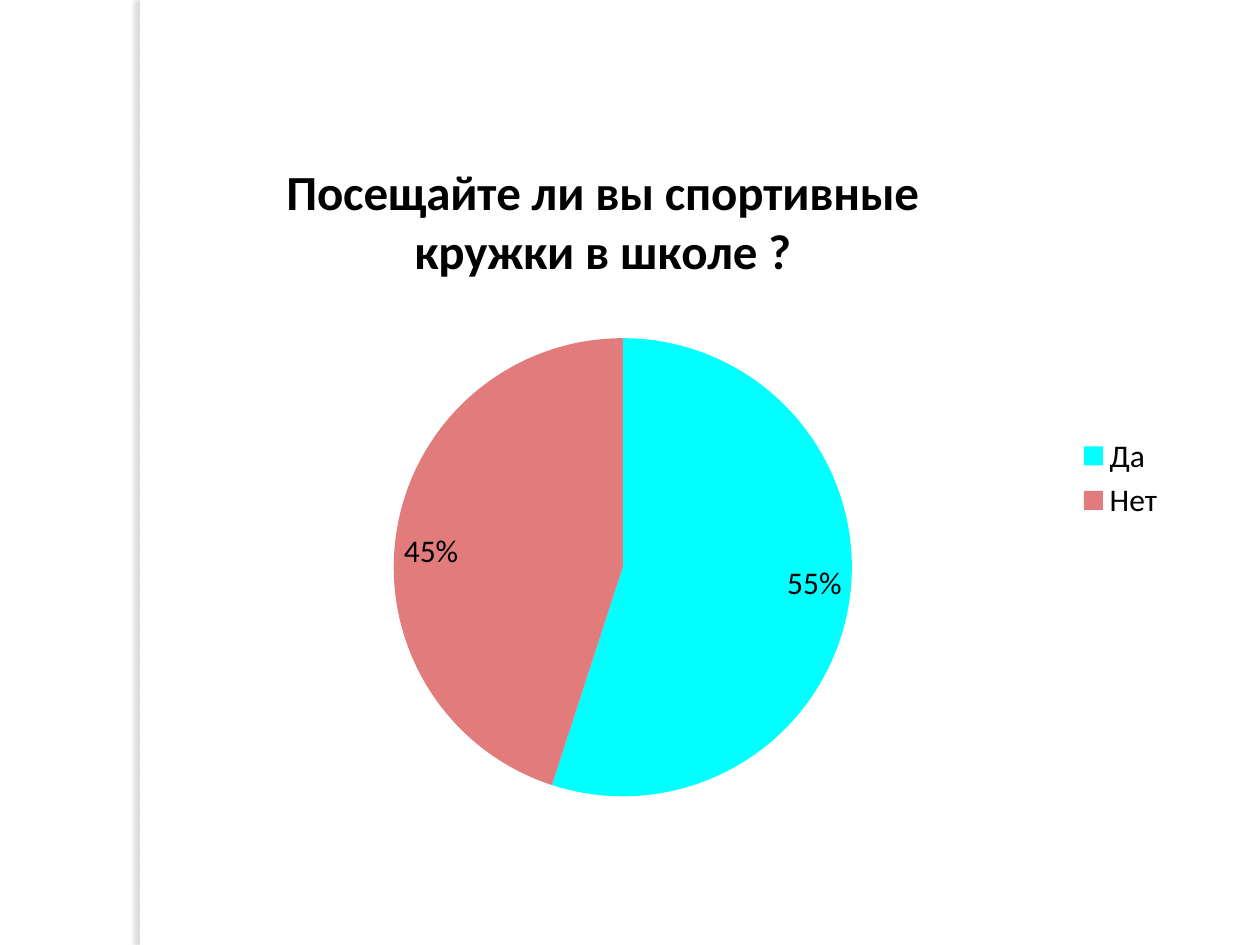
from pptx import Presentation
from pptx.chart.data import CategoryChartData
from pptx.dml.color import RGBColor
from pptx.enum.chart import XL_CHART_TYPE, XL_LABEL_POSITION, XL_LEGEND_POSITION
from pptx.enum.shapes import MSO_SHAPE
from pptx.oxml import parse_xml
from pptx.oxml.ns import nsdecls, qn
from pptx.util import Inches, Pt

WHITE = RGBColor(0xFF, 0xFF, 0xFF)
BLACK = RGBColor(0x00, 0x00, 0x00)
CYAN = RGBColor(0x00, 0xFF, 0xFF)
ROSE = RGBColor(0xE1, 0x7B, 0x7C)
SHADE = RGBColor(0x73, 0x6F, 0x63)


def place(parent, index, target=None, **shares):
    """Set a manual layout, in shares of the chart's size."""
    old = parent.find(qn("c:layout"))
    if old is not None:
        parent.remove(old)
    tags = f'<c:layoutTarget val="{target}"/>' if target else ""
    tags += "".join(f'<c:{key}Mode val="edge"/>' for key in "xy")
    tags += "".join(f'<c:{key} val="{val}"/>' for key, val in shares.items())
    parent.insert(index, parse_xml(
        f'<c:layout {nsdecls("c")}><c:manualLayout>{tags}'
        '</c:manualLayout></c:layout>'))


class Deck:
    face = "Calibri"
    size = Pt(18)
    head = Pt(28)

    def __init__(self, wide, high):
        self.prs = Presentation()
        self.prs.slide_width = Inches(wide)
        self.prs.slide_height = Inches(high)
        self.slide = self.prs.slides.add_slide(self.prs.slide_layouts[6])

    def box(self, x, y, w, h):
        """Turn shares of the slide into lengths."""
        wide, high = self.prs.slide_width, self.prs.slide_height
        return int(x * wide), int(y * high), int(w * wide), int(h * high)

    def style(self, font, size, bold=False):
        font.name, font.size, font.bold = self.face, size, bold
        font.color.rgb = BLACK

    def strip(self, *area):
        bar = self.slide.shapes.add_shape(MSO_SHAPE.RECTANGLE, *self.box(*area))
        bar.fill.solid()
        bar.fill.fore_color.rgb = WHITE
        bar.line.fill.background()
        bar.shadow.inherit = False
        effects = bar.element.spPr.find(qn("a:effectLst"))
        effects.append(parse_xml(
            f'<a:outerShdw {nsdecls("a")} blurRad="{Pt(3)}" dist="{Pt(3)}" '
            f'dir="10800000" algn="r" rotWithShape="0"><a:srgbClr val="{SHADE}">'
            '<a:alpha val="25000"/></a:srgbClr></a:outerShdw>'))

    def pie(self, title, parts, *area):
        data = CategoryChartData(number_format="0%")
        data.categories = [name for name, _, _ in parts]
        data.add_series(title, [value for _, value, _ in parts])
        chart = self.slide.shapes.add_chart(
            XL_CHART_TYPE.PIE, *self.box(*area), data).chart
        self.style(chart.font, self.size)

        # Title
        chart.has_title = True
        frame = chart.chart_title.text_frame
        frame.text = title
        self.style(frame.paragraphs[0].font, self.head, True)
        chart.chart_title.include_in_layout = False
        place(chart.chart_title._element, 1, x=0.1, y=0.03)

        # Legend
        chart.has_legend = True
        chart.legend.position = XL_LEGEND_POSITION.RIGHT
        chart.legend.include_in_layout = False
        self.style(chart.legend.font, self.size)

        # Slices and labels
        plot = chart.plots[0]
        plot.vary_by_categories = True
        place(plot._element.getparent(), 0, "inner",
              x=0.216, y=0.255, w=0.458, h=0.745)
        for index, (_, _, color) in enumerate(parts):
            fill = plot.series[0].points[index].format.fill
            fill.solid()
            fill.fore_color.rgb = color
        plot.has_data_labels = True
        labels = plot.data_labels
        labels.show_value = True
        labels.show_percentage = False
        labels.number_format = "0%"
        labels.number_format_is_linked = False
        labels.position = XL_LABEL_POSITION.INSIDE_END
        self.style(labels.font, self.size)

    def save(self):
        self.prs.save("out.pptx")


def main():
    deck = Deck(10, 7.5)
    # Side strip
    deck.strip(0.111, 0, 0.008, 1)
    # Survey chart
    deck.pie("Посещайте ли вы спортивные кружки в школе ?",
             [("Да", 0.55, CYAN), ("Нет", 0.45, ROSE)],
             0.141, 0.136, 0.794, 0.74)
    deck.save()


if __name__ == "__main__":
    main()
